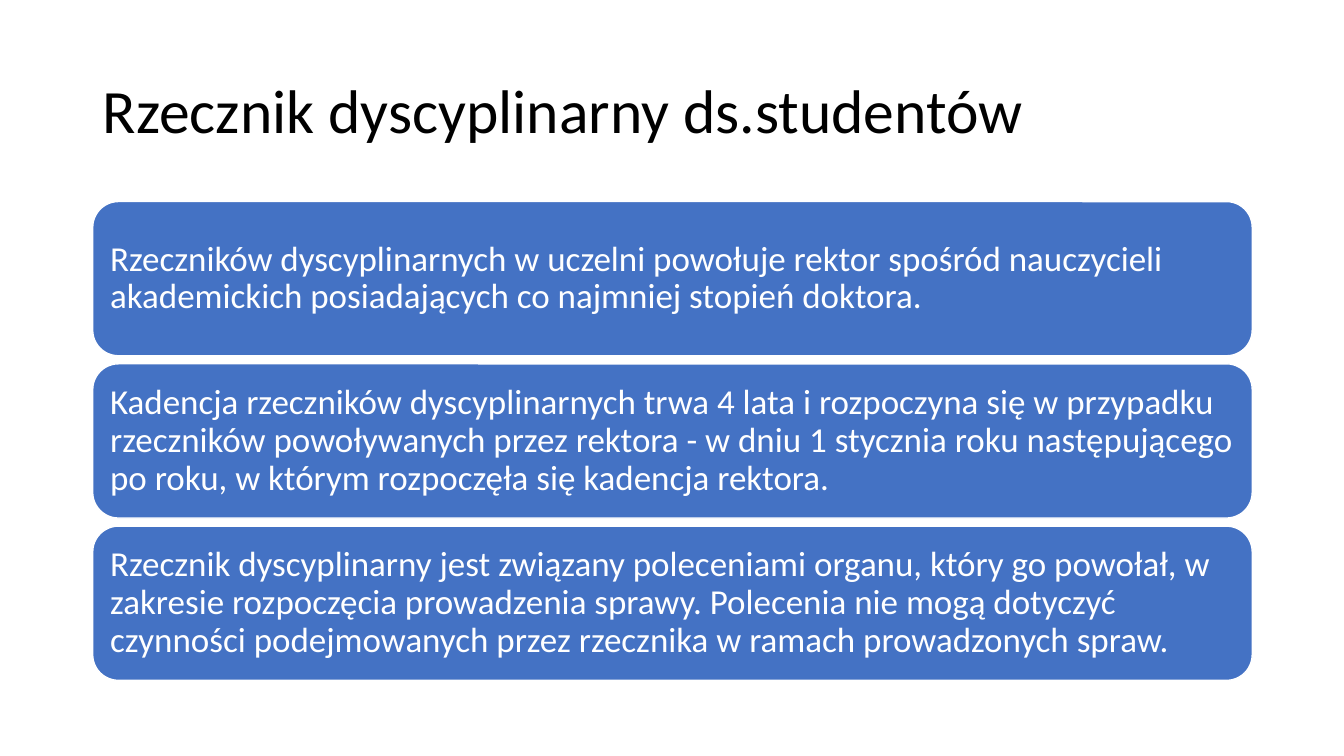
from pptx import Presentation
from pptx.dml.color import RGBColor
from pptx.enum.shapes import MSO_SHAPE
from pptx.enum.text import MSO_ANCHOR, PP_ALIGN
from pptx.util import Pt

PX = 9144  # EMU per px, 100 px to the inch
ROUNDED = MSO_SHAPE.ROUNDED_RECTANGLE
MIDDLE = MSO_ANCHOR.MIDDLE
LEFT = PP_ALIGN.LEFT
TITLE_ONLY = 5

TITLE = "Rzecznik dyscyplinarny ds.studentów"
RULES = [
    "Rzeczników dyscyplinarnych w uczelni powołuje rektor spośród nauczycieli "
    "akademickich posiadających co najmniej stopień doktora.",
    "Kadencja rzeczników dyscyplinarnych trwa 4 lata i rozpoczyna się w przypadku "
    "rzeczników powoływanych przez rektora - w dniu 1 stycznia roku następującego "
    "po roku, w którym rozpoczęła się kadencja rektora.",
    "Rzecznik dyscyplinarny jest związany poleceniami organu, który go powołał, "
    "w zakresie rozpoczęcia prowadzenia sprawy. Polecenia nie mogą dotyczyć "
    "czynności podejmowanych przez rzecznika w ramach prowadzonych spraw.",
]


def color(value):
    return RGBColor.from_string(value)


def write_text(shape, text, size, text_color, margins):
    """Fill the shape with one left-aligned, vertically centred paragraph."""
    frame = shape.text_frame
    frame.text = text
    frame.word_wrap = True
    frame.vertical_anchor = MIDDLE
    for name, value in margins.items():
        setattr(frame, "margin_" + name, value * PX)
    paragraph = frame.paragraphs[0]
    paragraph.alignment = LEFT
    paragraph.line_spacing = 0.9
    font = paragraph.runs[0].font
    for name, value in {"name": "Calibri", "size": Pt(size)}.items():
        setattr(font, name, value)
    font.color.rgb = color(text_color)


def place_title(slide, left, top, width, height):
    title = slide.shapes.title
    box = {"left": left, "top": top, "width": width, "height": height}
    for name, value in box.items():
        setattr(title, name, value * PX)
    margins = {"left": 10, "right": 10, "top": 5, "bottom": 5}
    write_text(title, TITLE, 44, "000000", margins)


def add_rules(slide, left, top, width, height, gap=8):
    """Stack equally tall rounded cards that fill the given box."""
    card_height = (height - gap * (len(RULES) - 1)) // len(RULES)
    margins = dict.fromkeys(["left", "right", "top", "bottom"], 10)
    for index, rule in enumerate(RULES):
        card_top = top + index * (card_height + gap)
        card = slide.shapes.add_shape(
            ROUNDED, left * PX, card_top * PX, width * PX, card_height * PX)
        card.shadow.inherit = False
        card.fill.solid()
        card.fill.fore_color.rgb = color("4472C4")
        card.line.color.rgb = color("FFFFFF")
        card.line.width = Pt(1)
        write_text(card, rule, 25, "FFFFFF", margins)


def main():
    presentation = Presentation()
    presentation.slide_width = 1333 * PX
    presentation.slide_height = 750 * PX
    slide = presentation.slides.add_slide(presentation.slide_layouts[TITLE_ONLY])
    place_title(slide, 92, 40, 1150, 145)
    add_rules(slide, 92, 200, 1150, 475)
    presentation.save("out.pptx")


if __name__ == "__main__":
    main()
